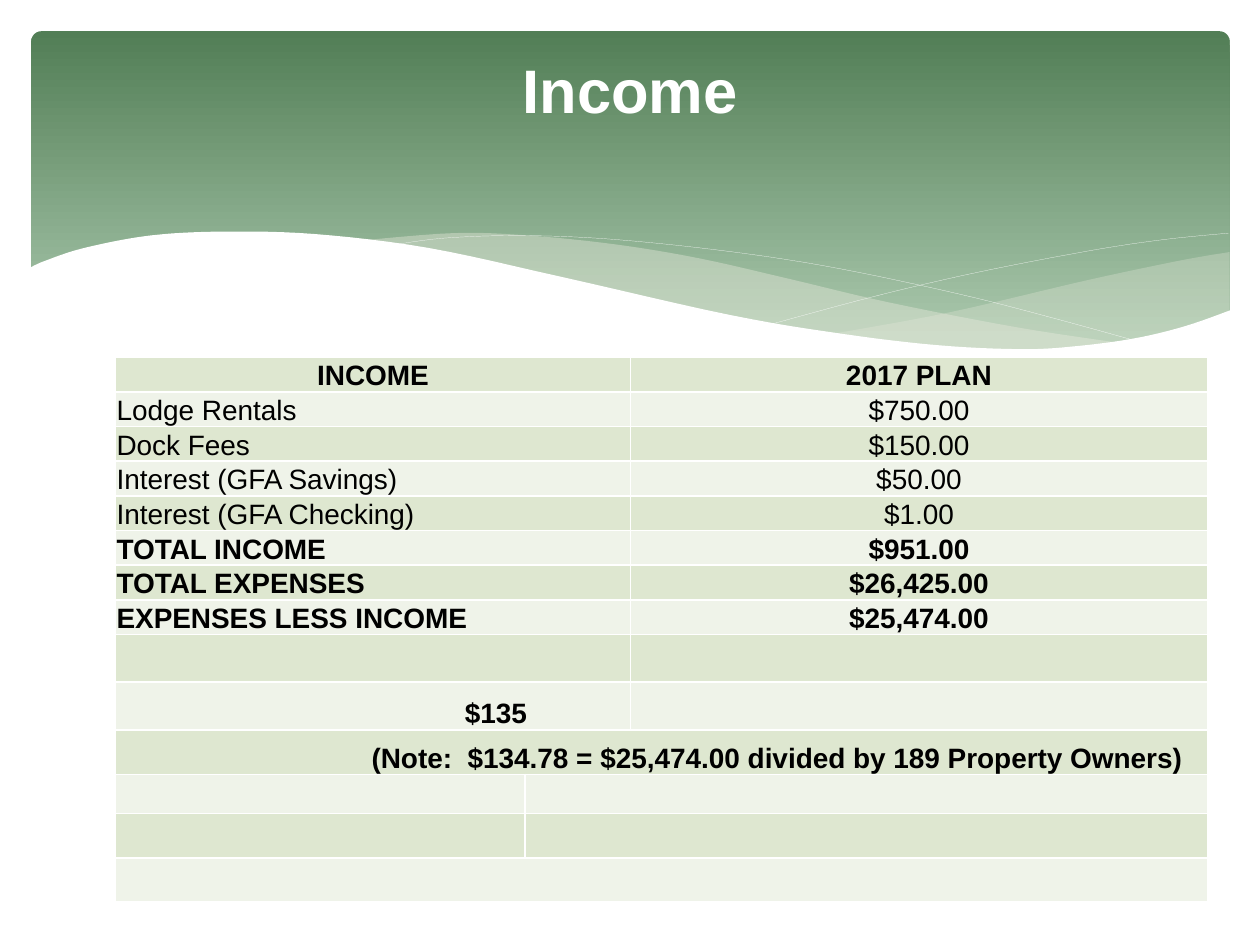
from lxml import etree
from pptx import Presentation
from pptx.dml.color import RGBColor
from pptx.enum.shapes import MSO_SHAPE
from pptx.enum.text import MSO_ANCHOR, PP_ALIGN
from pptx.oxml import parse_xml
from pptx.oxml.ns import nsdecls, qn
from pptx.util import Cm, Pt

ROUND = MSO_SHAPE.ROUNDED_RECTANGLE
MIDDLE, BOTTOM = MSO_ANCHOR.MIDDLE, MSO_ANCHOR.BOTTOM
LEFT, CENTER = PP_ALIGN.LEFT, PP_ALIGN.CENTER

THEME = {
    "font": "Arial", "title": 35.1, "body": 16,
    "white": "FFFFFF", "ink": "000000", "mist": "EAEBDE",
    "dark": "527E56", "light": "AAC8AD",
    "bands": ("DEE7D0", "EFF3E9"),
}

TITLE = "Income"
HEAD = ("INCOME", "2017 PLAN")
ITEMS = [
    ("Lodge Rentals", "$750.00"),
    ("Dock Fees", "$150.00"),
    ("Interest (GFA Savings)", "$50.00"),
    ("Interest (GFA Checking)", "$1.00"),
]
TOTALS = [
    ("TOTAL INCOME", "$951.00"),
    ("TOTAL EXPENSES", "$26,425.00"),
    ("EXPENSES LESS INCOME", "$25,474.00"),
]
SHARE = "$135"
NOTE = "(Note:  $134.78 = $25,474.00 divided by 189 Property Owners)"

COLS = [8.25, 2.13, 11.63]
ROWS = [0.7] * 8 + [0.96, 0.96, 0.9, 0.79, 0.89, 0.89]
MERGES = [(row, 0, 1) for row in range(10)]
MERGES += [(10, 0, 2), (11, 1, 2), (12, 1, 2), (13, 0, 2)]

WAVES = [
    ([[(24.79, 5.08), (23.75, 5.26), (21.87, 5.66), (19.13, 6.3), (16.79, 6.73)],
      [(16.79, 6.73), (18.26, 6.91), (19.84, 7.04), (21.44, 7.04), (22.99, 6.83),
       (23.93, 6.58), (24.79, 6.27)]], "mist", 29),
    ([[(22.68, 6.93), (20.5, 6.6), (17.93, 6.1), (15.98, 5.64), (14.1, 5.21),
       (12.42, 4.93), (10.67, 4.75), (9.17, 4.7), (7.26, 4.85)],
      [(7.26, 4.85), (9.19, 5.16), (11.4, 5.64), (14.38, 6.3), (16.51, 6.71),
       (18.34, 6.96), (20.22, 7.06), (21.54, 7.04), (22.68, 6.93)]], "mist", 40),
    ([[(7.85, 4.95), (8.97, 4.8), (10.57, 4.75), (12.42, 4.83), (14.78, 5.08),
       (16.89, 5.41), (19.3, 5.92), (21.11, 6.38), (23.04, 6.91)]], None, 100),
    ([[(15.57, 6.53), (17.65, 5.97), (19.71, 5.49), (22, 5.05), (23.47, 4.83),
       (24.77, 4.7)]], None, 100),
    ([[(24.82, 6.25), (23.88, 6.58), (22.83, 6.83), (21.59, 6.99), (20.55, 7.04),
       (18.9, 6.96), (16.97, 6.73), (14.71, 6.35), (11.35, 5.59), (8.64, 5),
       (6.35, 4.72), (4.5, 4.67), (3.02, 4.75), (1.7, 5), (0.91, 5.26), (0.58, 5.41)],
      [(0.58, 8.36), (24.82, 8.36)]], "white", 100),
]


def tint(name):
    return RGBColor.from_string(THEME.get(name, name))


def smooth(run, steps=6):
    ends = [run[0], *run, run[-1]]
    dots = [run[0]]
    for a, b, c, d in zip(ends, ends[1:], ends[2:], ends[3:]):
        for step in range(1, steps + 1):
            t = step / steps
            dots.append(tuple(
                (2 * q + (r - p) * t + (2 * p - 5 * q + 4 * r - s) * t**2
                 + (3 * q - p - 3 * r + s) * t**3) / 2
                for p, q, r, s in zip(a, b, c, d)))
    return dots


def wave(shapes, runs, fill, alpha):
    dots = [(Cm(x), Cm(y)) for run in runs
            for x, y in (smooth(run) if len(run) > 2 else run)]
    pen = shapes.build_freeform(*dots[0])
    pen.add_line_segments(dots[1:], close=fill is not None)
    shape = pen.convert_to_shape()
    shape.shadow.inherit = False
    if fill is None:
        shape.fill.background()
        shape.line.color.rgb = tint("white")
        shape.line.width = Pt(0.1)
        return
    shape.line.fill.background()
    shape.fill.solid()
    shape.fill.fore_color.rgb = tint(fill)
    if alpha < 100:
        color = shape.element.spPr.find(".//" + qn("a:srgbClr"))
        etree.SubElement(color, qn("a:alpha"), val=str(alpha * 1000))


def write(para, text, size, color, bold, align):
    para.alignment = align
    run = para.add_run()
    run.text = text
    font = run.font
    font.name, font.size, font.bold = THEME["font"], Pt(size), bold
    font.color.rgb = tint(color)


def banner(shapes):
    box = shapes.add_shape(ROUND, Cm(0.63), Cm(0.63), Cm(24.16), Cm(6.86))
    box.adjustments[0] = 0.03
    box.shadow.inherit = False
    box.line.fill.background()
    box.fill.gradient()
    box.fill.gradient_angle = 270
    for stop, name, place in zip(box.fill.gradient_stops, ("dark", "light"), (0, 0.9)):
        stop.color.rgb = tint(name)
        stop.position = place
    for item in WAVES:
        wave(shapes, *item)


def style(cell, band):
    cell.vertical_anchor = BOTTOM
    cell.margin_left = cell.margin_right = cell.margin_top = Cm(0.02)
    cell.margin_bottom = 0
    props = cell._tc.get_or_add_tcPr()
    for side in ("lnL", "lnR", "lnT", "lnB"):
        props.append(parse_xml(
            f'<a:{side} {nsdecls("a")} w="{Pt(1)}"><a:solidFill>'
            f'<a:srgbClr val="{THEME["white"]}"/></a:solidFill></a:{side}>'))
    cell.fill.solid()
    cell.fill.fore_color.rgb = tint(band)
    cell.text_frame.paragraphs[0].font.size = Pt(THEME["body"])


def budget(shapes):
    table = shapes.add_table(len(ROWS), len(COLS), Cm(2.33), Cm(7.2),
                             Cm(sum(COLS)), Cm(sum(ROWS))).table
    for col, width in zip(table.columns, COLS):
        col.width = Cm(width)
    for i, (row, height) in enumerate(zip(table.rows, ROWS)):
        row.height = Cm(height)
        for cell in row.cells:
            style(cell, THEME["bands"][i % 2])
    for row, first, last in MERGES:
        table.cell(row, first).merge(table.cell(row, last))

    def put(row, col, text, bold, align=LEFT, indent=0):
        para = table.cell(row, col).text_frame.paragraphs[0]
        write(para, text, THEME["body"], "ink", bold, align)
        if indent:
            para._p.get_or_add_pPr().set("marL", str(Cm(indent)))

    for row, (label, value) in enumerate([HEAD, *ITEMS, *TOTALS]):
        bold = not 1 <= row <= len(ITEMS)
        put(row, 0, label, bold, LEFT if row else CENTER)
        put(row, 2, value, bold, CENTER)
    put(9, 0, SHARE, True, indent=7.02)
    put(10, 0, NOTE, True, indent=5.14)


def main():
    deck = Presentation()
    deck.slide_width, deck.slide_height = Cm(25.4), Cm(19.05)
    slide = deck.slides.add_slide(deck.slide_layouts[5])
    shapes = slide.shapes
    banner(shapes)
    title = shapes.title
    title.left, title.top, title.width, title.height = Cm(1.9), Cm(0.85), Cm(21.6), Cm(1.88)
    title.text_frame.vertical_anchor = MIDDLE
    write(title.text_frame.paragraphs[0], TITLE, THEME["title"], "white", True, CENTER)
    title.element.getparent().append(title.element)
    budget(shapes)
    deck.save("out.pptx")


if __name__ == "__main__":
    main()
